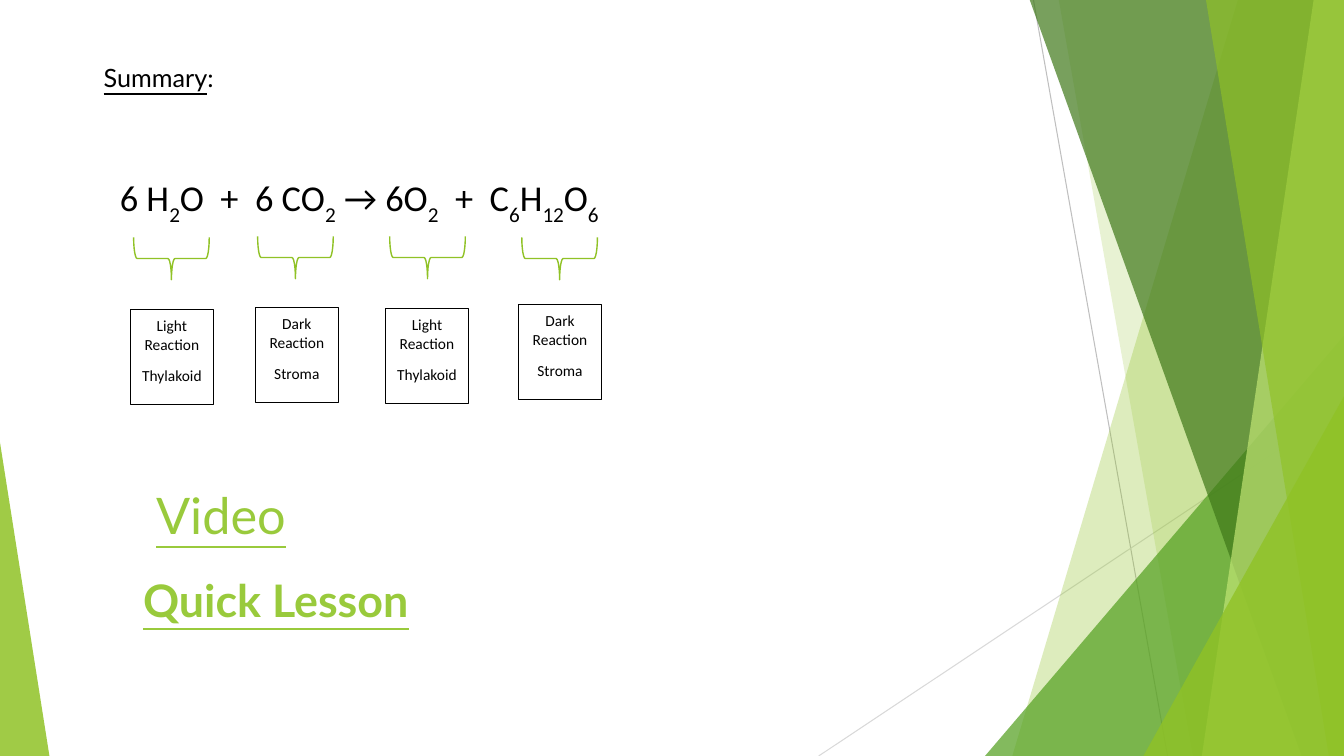
"""Build the photosynthesis summary slide."""
from dataclasses import dataclass

from lxml import etree
from pptx import Presentation
from pptx.dml.color import RGBColor
from pptx.enum.shapes import MSO_CONNECTOR, MSO_SHAPE
from pptx.enum.text import MSO_ANCHOR, PP_ALIGN
from pptx.oxml.ns import qn
from pptx.shapes.autoshape import Shape
from pptx.slide import Slide
from pptx.text.text import _Paragraph as Paragraph
from pptx.util import Inches, Pt

STRAIGHT = MSO_CONNECTOR.STRAIGHT
TRIANGLE = MSO_SHAPE.ISOSCELES_TRIANGLE
BRACE, RECT = MSO_SHAPE.RIGHT_BRACE, MSO_SHAPE.RECTANGLE
TOP, LEFT, CENTER = MSO_ANCHOR.TOP, PP_ALIGN.LEFT, PP_ALIGN.CENTER

GREEN = RGBColor(0x90, 0xC2, 0x26)
LEAF = RGBColor(0x54, 0xA0, 0x21)
FOREST = RGBColor(0x3F, 0x78, 0x19)
LIME = RGBColor(0xC0, 0xE4, 0x74)
LINK_GREEN = RGBColor(0x99, 0xCA, 0x3C)
GRAY = RGBColor(0xBF, 0xBF, 0xBF)
PALE_GRAY = RGBColor(0xD9, 0xD9, 0xD9)
BLACK = RGBColor(0, 0, 0)
WHITE = RGBColor(0xFF, 0xFF, 0xFF)

WIDTH, HEIGHT, BLEED_TOP = 13.33, 7.5, -0.01


@dataclass(frozen=True)
class Ray:
    start: tuple[float, float]
    end: tuple[float, float]
    color: RGBColor


@dataclass(frozen=True)
class Facet:
    top_left: float
    bottom_left: float
    color: RGBColor
    opacity: int


@dataclass(frozen=True)
class Corner:
    left: float
    top: float
    width: float
    apex: float
    color: RGBColor
    opacity: int


@dataclass(frozen=True)
class Stage:
    brace_left: float
    brace_top: float
    box_left: float
    box_top: float
    reaction: str
    place: str


@dataclass(frozen=True)
class Caption:
    left: float
    top: float
    width: float
    height: float
    runs: tuple[tuple[str, dict], ...]
    font: dict
    color: RGBColor


RAYS = (
    Ray((10.25, 0), (11.58, HEIGHT), GRAY),
    Ray((WIDTH, 4.03), (8.12, HEIGHT), PALE_GRAY),
)
BACKDROP = (
    Facet(12.28, 10.04, GREEN, 30),
    Facet(10.5, 11.83, GREEN, 20),
    Corner(9.77, 3.33, 3.56, 1, LEAF, 72),
    Facet(10.21, 12.91, FOREST, 70),
    Facet(13.03, 11.92, LIME, 70),
    Facet(11.96, 13.18, GREEN, 65),
    Corner(11.34, 3.93, 1.99, 1, GREEN, 80),
    Corner(0, 4.39, 0.49, 0, GREEN, 85),
)
STAGES = (
    Stage(1.49, 2.19, 1.29, 3.07, "Light Reaction", "Thylakoid"),
    Stage(2.72, 2.18, 2.53, 3.05, "Dark Reaction", "Stroma"),
    Stage(4.03, 2.18, 3.82, 3.06, "Light Reaction", "Thylakoid"),
    Stage(5.34, 2.19, 5.14, 3.02, "Dark Reaction", "Stroma"),
)
EQUATION = ("6 H", "2", "O  +  6 CO", "2", " → 6O", "2", "  +  C", "6", "H", "12", "O", "6")
UNDERLINED = {"underline": True}
CAPTIONS = (
    Caption(0.93, 0.57, 5.29, 0.4, (("Summary", UNDERLINED), (":", {})),
            {"size": Pt(18), "name": "Lato"}, BLACK),
    Caption(1.45, 4.75, 7.19, 0.71, (("Video", UNDERLINED),),
            {"size": Pt(36), "name": "Lato"}, LINK_GREEN),
    Caption(1.32, 5.63, 6.08, 0.64, (("Quick Lesson", UNDERLINED),),
            {"size": Pt(32), "name": "Lato", "bold": True}, LINK_GREEN),
)


def apply(target: object, values: dict) -> None:
    for name, value in values.items():
        setattr(target, name, value)


def paint(shape: Shape, color: RGBColor, opacity: int) -> None:
    shape.shadow.inherit = False
    shape.line.fill.background()
    shape.fill.solid()
    shape.fill.fore_color.rgb = color
    tint = shape.fill._xPr.find(qn("a:solidFill"))[0]
    etree.SubElement(tint, qn("a:alpha")).set("val", str(opacity * 1000))


def draw_ray(slide: Slide, ray: Ray) -> None:
    x1, y1, x2, y2 = map(Inches, ray.start + ray.end)
    beam = slide.shapes.add_connector(STRAIGHT, x1, y1, x2, y2)
    beam.line.color.rgb = ray.color
    beam.line.width = Pt(0.75)
    etree.SubElement(beam._element.spPr, qn("a:effectLst"))


def draw_facet(slide: Slide, facet: Facet) -> None:
    corners = ((facet.top_left, BLEED_TOP), (WIDTH, BLEED_TOP),
               (WIDTH, HEIGHT), (facet.bottom_left, HEIGHT))
    points = [(Inches(x), Inches(y)) for x, y in corners]
    outline = slide.shapes.build_freeform(*points[0])
    outline.add_line_segments(points[1:], close=True)
    paint(outline.convert_to_shape(), facet.color, facet.opacity)


def draw_corner(slide: Slide, corner: Corner) -> None:
    wedge = slide.shapes.add_shape(TRIANGLE, Inches(corner.left), Inches(corner.top),
                                   Inches(corner.width), Inches(HEIGHT - corner.top))
    wedge.adjustments[0] = corner.apex
    paint(wedge, corner.color, corner.opacity)


def add_run(paragraph: Paragraph, text: str, font: dict, color: RGBColor,
            baseline: int = 0) -> None:
    run = paragraph.add_run()
    run.text = text
    apply(run.font, font)
    run.font.color.rgb = color
    if baseline:
        run._r.get_or_add_rPr().set("baseline", str(baseline))


def draw_stage(slide: Slide, stage: Stage) -> None:
    brace = slide.shapes.add_shape(BRACE, Inches(stage.brace_left), Inches(stage.brace_top),
                                   Inches(0.42), Inches(0.75))
    box = slide.shapes.add_shape(RECT, Inches(stage.box_left), Inches(stage.box_top),
                                 Inches(0.83), Inches(0.94))
    brace.rotation = 90
    brace.fill.background()
    box.fill.solid()
    box.fill.fore_color.rgb = WHITE
    for shape, color, weight in ((brace, GREEN, 1), (box, BLACK, 0.75)):
        shape.shadow.inherit = False
        shape.line.color.rgb = color
        shape.line.width = Pt(weight)
    frame = box.text_frame
    apply(frame, {"word_wrap": True, "vertical_anchor": TOP})
    for paragraph, text in ((frame.paragraphs[0], stage.reaction),
                            (frame.add_paragraph(), stage.place)):
        apply(paragraph, {"alignment": CENTER, "line_spacing": 1.07, "space_after": Pt(8)})
        add_run(paragraph, text, {"size": Pt(11), "name": "Calibri"}, BLACK)


def add_text_area(slide: Slide, left: float, top: float, width: float,
                  height: float) -> Paragraph:
    area = slide.shapes.add_textbox(Inches(left), Inches(top), Inches(width), Inches(height))
    apply(area.text_frame, {"word_wrap": True, "vertical_anchor": TOP})
    paragraph = area.text_frame.paragraphs[0]
    paragraph.alignment = LEFT
    return paragraph


def main() -> None:
    deck = Presentation()
    apply(deck, {"slide_width": Inches(WIDTH), "slide_height": Inches(HEIGHT)})
    slide = deck.slides.add_slide(deck.slide_layouts[6])
    for ray in RAYS:
        draw_ray(slide, ray)
    for panel in BACKDROP:
        if isinstance(panel, Facet):
            draw_facet(slide, panel)
        else:
            draw_corner(slide, panel)
    for stage in STAGES:
        draw_stage(slide, stage)
    equation = add_text_area(slide, 1.09, 1.69, 5.26, 0.98)
    for index, term in enumerate(EQUATION):
        add_run(equation, term, {"size": Pt(26), "name": "Calibri"}, BLACK, -30000 * (index % 2))
    for caption in CAPTIONS:
        paragraph = add_text_area(slide, caption.left, caption.top, caption.width, caption.height)
        for text, extra in caption.runs:
            add_run(paragraph, text, caption.font | extra, caption.color)
    deck.save("out.pptx")


if __name__ == "__main__":
    main()
